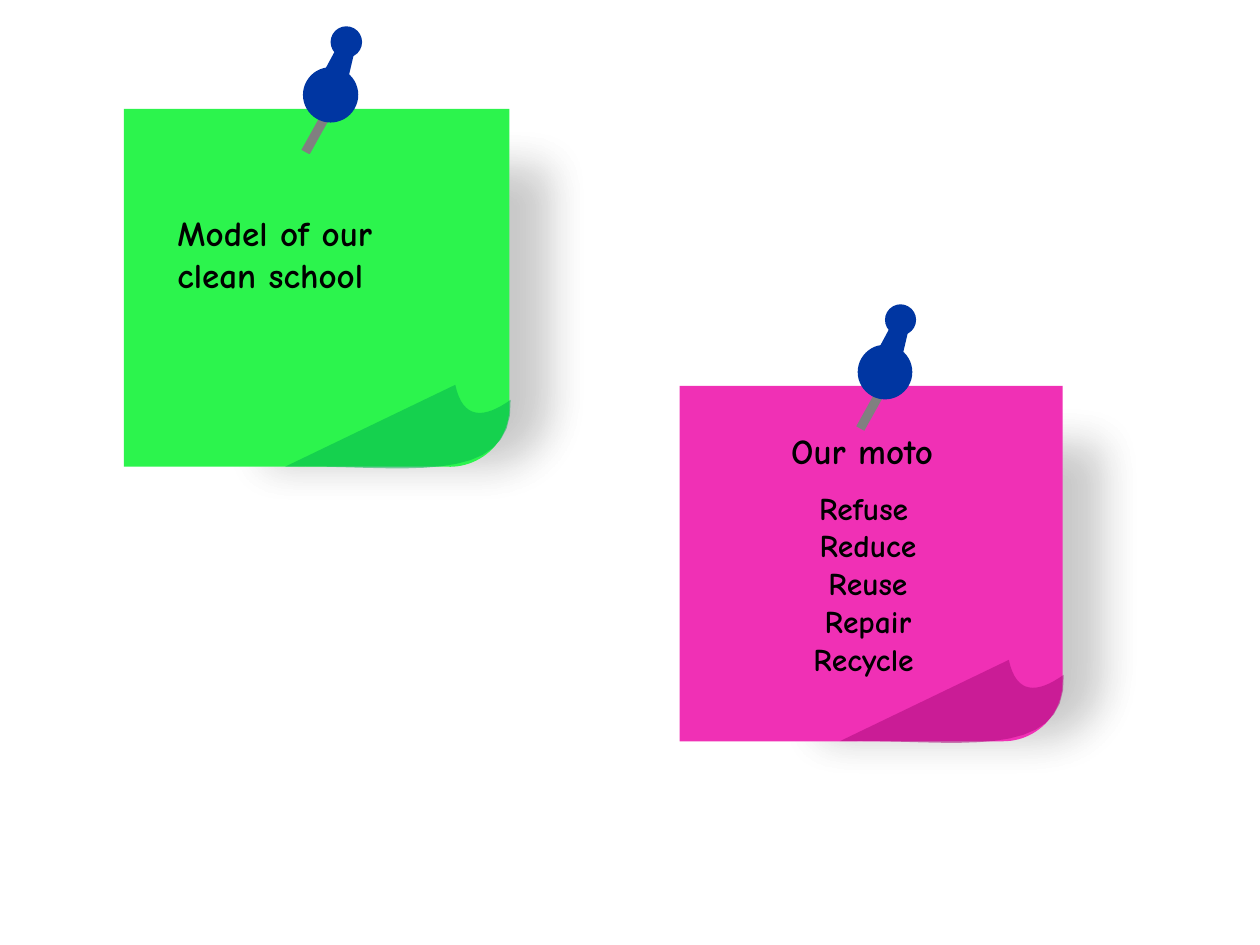
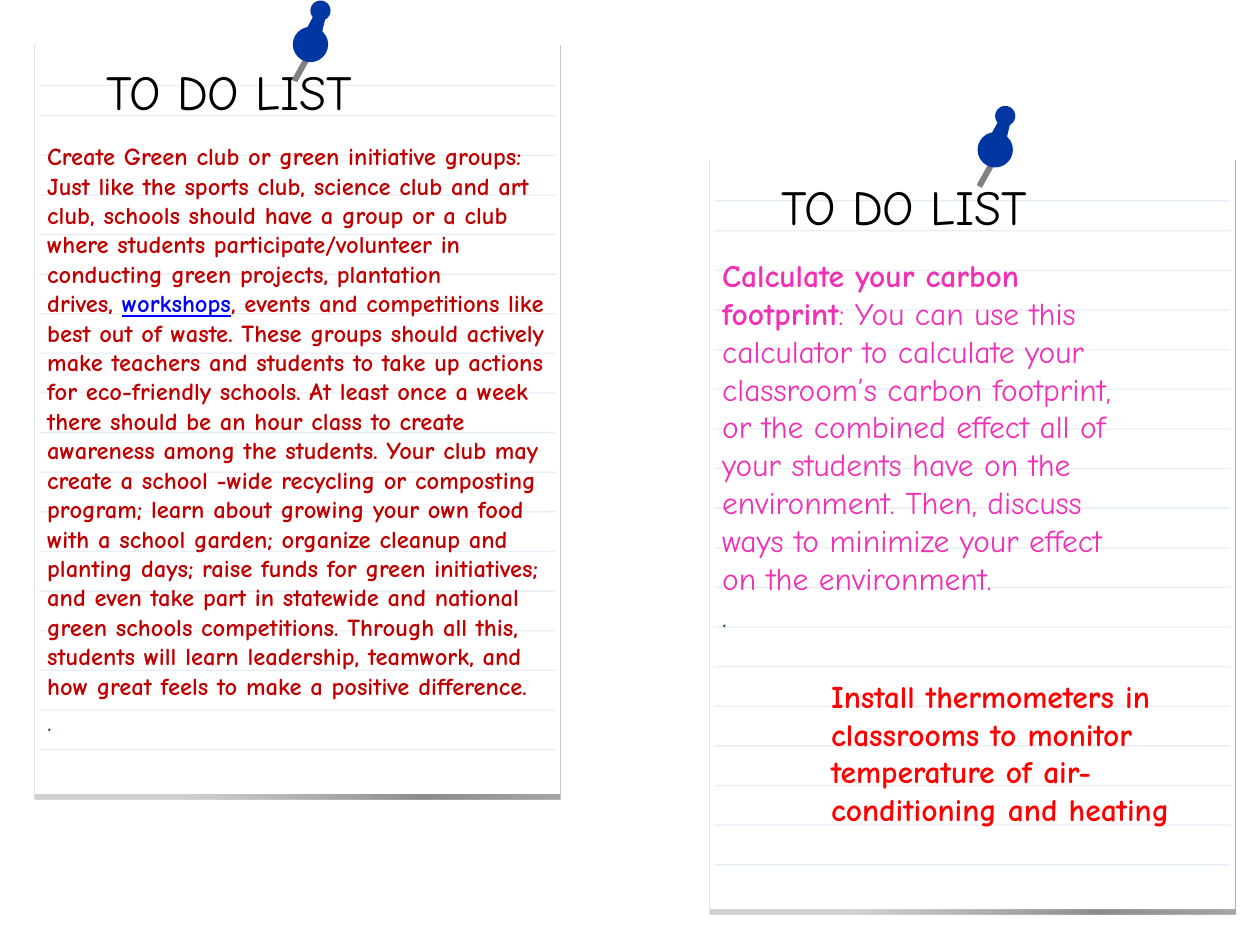
import pptx
import pptx.util
import pptx.dml.color
import pptx.enum.shapes
import pptx.enum.text
import pptx.oxml.ns
from lxml import etree

Pt = pptx.util.Pt
RGB = pptx.dml.color.RGBColor
KIND = pptx.enum.shapes.MSO_SHAPE
qn = pptx.oxml.ns.qn
HARD = chr(160)  # no-break space

# Colours
BLACK = RGB(0x00, 0x00, 0x00)
WHITE = RGB(0xFF, 0xFF, 0xFF)
GREEN = RGB(0x2C, 0xF4, 0x4D)
LEAF = RGB(0x00, 0xB0, 0x50)
PINK = RGB(0xF0, 0x30, 0xB5)
PLUM = RGB(0xA6, 0x0A, 0x79)
NAVY = RGB(0x00, 0x36, 0xA2)
STEEL = RGB(0x80, 0x80, 0x80)
SILVER = RGB(0xA6, 0xA6, 0xA6)
ASH = RGB(0x8C, 0x8C, 0x8C)
RULE = RGB(0x4B, 0x7E, 0xBC)
CRIMSON = RGB(0xC0, 0x00, 0x00)
RED = RGB(0xFF, 0x00, 0x00)
BLUE = RGB(0x00, 0x00, 0xFF)
TEAL = RGB(0x21, 0x59, 0x68)

# Text formats
NOTE = {"size": Pt(20), "bold": True, "color": BLACK}
MOTTO = {"size": Pt(18), "bold": True, "color": BLACK}
TITLE = {"size": Pt(28), "color": BLACK}
CLUB = {"size": Pt(14), "bold": True, "color": CRIMSON}
LINK = {**CLUB, "color": BLUE, "underline": True}
DOT = {"size": Pt(18), "color": TEAL}
LEAD = {"size": Pt(18), "bold": True, "color": PINK}
CALC = {"size": Pt(18), "color": PINK}
TASK = {"size": Pt(18), "bold": True, "color": RED}


def paint(fill, *stops):
    """Fill with (colour, alpha, place) stops; one stop gives a solid fill."""
    if len(stops) == 1:
        fill.solid()
        fill.fore_color.rgb = stops[0][0]
        tints = [fill._xPr.find(".//" + qn("a:srgbClr"))]
    else:
        fill.gradient()
        fill.gradient_angle = 0
        bar = fill._xPr.find(".//" + qn("a:gsLst"))
        for old in list(bar):
            bar.remove(old)
        tints = []
        for color, _, place in stops:
            stop = etree.SubElement(bar, qn("a:gs"), pos=str(place * 1000))
            tints.append(etree.SubElement(stop, qn("a:srgbClr"), val=str(color)))
    for tint, (_, alpha, _) in zip(tints, stops):
        if alpha < 100:
            etree.SubElement(tint, qn("a:alpha"), val=str(alpha * 1000))


def write(slide, box, paras, align=None, shifts=()):
    """Text box of paragraphs, each a list of (text, format) runs."""
    frame = slide.shapes.add_textbox(*map(Pt, box)).text_frame
    frame.word_wrap = True
    for i, runs in enumerate(paras):
        para = frame.paragraphs[0] if i == 0 else frame.add_paragraph()
        para.alignment = align
        if i in shifts:
            para._p.get_or_add_pPr().set("marL", str(Pt(5)))
        for text, style in runs:
            run = para.add_run()
            run.text = text
            run.font.name = "Comic Neue"
            for key, value in style.items():
                if key == "color":
                    run.font.color.rgb = value
                else:
                    setattr(run.font, key, value)


deck = pptx.Presentation()
deck.slide_width, deck.slide_height = Pt(720), Pt(540)
board, lists = [deck.slides.add_slide(deck.slide_layouts[6]) for _ in range(2)]

# Sticky notes: shade, sheet and curled corner
CURL = [
    [(221, 166.3), (205.9, 177.1), (193.7, 177.8), (189.4, 157.7)],
    [(92.2, 204.5), (155.5, 203), (223.2, 218.2), (221, 166.3)],
]
NOTES = [(70.8, 62.2, 1, GREEN, LEAF), (388.4, 220.5, 0.993, PINK, PLUM)]
for x, y, unit, color, dark in NOTES:
    for dx, dy, w, h, tone, alpha in [
        (55.4, 7.9, 212.4, 220.3, BLACK, 16),
        (0, 0, 220.3, 204.5, color, 100),
    ]:
        box = x + dx * unit, y + dy * unit, w * unit, h * unit
        sheet = board.shapes.add_shape(KIND.SNIP_ROUND_RECTANGLE, *map(Pt, box))
        sheet.rotation = 180
        sheet.adjustments[0], sheet.adjustments[1] = 0.167, 0
        sheet.shadow.inherit = False
        sheet.line.fill.background()
        paint(sheet.fill, (tone, alpha, 0))
        if tone == BLACK:
            soft = sheet._element.spPr.find(qn("a:effectLst"))
            shade = etree.SubElement(soft, qn("a:outerShdw"))
            tint = etree.SubElement(shade, qn("a:srgbClr"), val=str(BLACK))
            etree.SubElement(tint, qn("a:alpha"), val="43000")
            etree.SubElement(soft, qn("a:softEdge"), rad=str(Pt(25)))
    edge = []
    for arc in CURL:
        for step in range(17):
            t = step / 16
            parts = [(1 - t) ** 3, 3 * t * (1 - t) ** 2, 3 * t * t * (1 - t), t ** 3]
            px, py = [sum(k * p[axis] for k, p in zip(parts, arc)) for axis in (0, 1)]
            edge.append((Pt(x + px * unit), Pt(y + py * unit)))
    form = board.shapes.build_freeform(*edge[0])
    form.add_line_segments(edge[1:], close=True)
    curl = form.convert_to_shape()
    curl.shadow.inherit = False
    curl.line.fill.background()
    paint(curl.fill, (dark, 51, 0))

# Note text
write(board, (94.3, 117.4, 173.5, 77), [[("Model of our clean school", NOTE)]])
write(board, (445, 241.9, 172.1, 55.4), [[("Our moto", NOTE)]])
words = ["Refuse", "Reduce", "Reuse", "Repair", "Recycle"]
write(board, (416.8, 275.7, 153.4, 138.2), [[(word, MOTTO)] for word in words],
      pptx.enum.text.PP_ALIGN.CENTER, (1, 2, 3))

# List pages
club = [
    [("Create Green club or green initiative groups:", CLUB)],
    [("Just like the sports club, science club and art club, schools should have "
      "a group or a club where students participate/volunteer in conducting green "
      "projects, plantation drives," + HARD, CLUB),
     ("workshops", LINK),
     (", events and competitions like best out of waste. These groups should "
      "actively make teachers and students to take up actions for eco-friendly "
      "schools. At least once a week there should be an hour class to create "
      "awareness among the students. Your club may create a school -wide recycling "
      "or composting program; learn about growing your own food with a school "
      "garden; organize cleanup and planting days; raise funds for green "
      "initiatives; and even take part in statewide and national green schools "
      "competitions. Through all this, students will learn leadership, teamwork, "
      "and how great feels to make a positive difference.", CLUB)],
    [(".", DOT)],
]
calc = [
    [("Calculate your carbon footprint", LEAD),
     (": You can use this calculator to calculate your classroom’s carbon "
      "footprint, or the combined effect all of your students have on the "
      "environment. Then, discuss ways to minimize your effect on the "
      "environment.", CALC)],
    [(".", DOT)],
]
EDGE = [(SILVER, 51, 27), (ASH, 100, 74), (SILVER, 100, 100)]
LAYERS = [(-2.3, [(WHITE, 42, 0)]), (3, EDGE), (0, [(WHITE, 100, 0)])]
RULES = [25.8] + [43 + 22.64 * row for row in range(17)]
for x, y, wide, tall, paras in [
    (19.9, 23.1, 306, 416.9, club),
    (405.6, 88.9, 254.9, 290.9, calc),
]:
    for dy, stops in LAYERS:
        box = x, y + dy, 300.2, 430.6
        page = lists.shapes.add_shape(KIND.RECTANGLE, *map(Pt, box))
        page.shadow.inherit = False
        page.line.fill.background()
        paint(page.fill, *stops)
    for dy in RULES:
        ends = x + 2.6, y + dy, x + 297.5, y + dy
        rule = lists.shapes.add_connector(
            pptx.enum.shapes.MSO_CONNECTOR.STRAIGHT, *map(Pt, ends))
        rule.line.width = Pt(0.75)
        paint(rule.line.fill, (RULE, 13, 0))
        etree.SubElement(rule._element.spPr, qn("a:effectLst"))
    write(lists, (x + 33.9, y + 8.5, 232.6, 41), [[("TO DO LIST", TITLE)]])
    write(lists, (x, y + 54, wide, tall), paras)

# Push pins, measured in ball widths
NECK = [(0.25, 0.32), (0.73, -0.57), (0.98, -0.48), (0.75, 0.5)]
SHAFT = [(STEEL, 100, 58), (SILVER, 100, 100)]
PARTS = [
    (KIND.RECTANGLE, 0.32, 0.16, 0.17, 1.47, 29.1, SHAFT),
    (KIND.OVAL, 0, 0, 1, 1, 0, [(NAVY, 100, 0)]),
    (KIND.OVAL, 0.5, -0.74, 0.57, 0.57, 0, [(NAVY, 100, 0)]),
]
for slide, x, y, ball in [
    (board, 173.1, 38.4, 31.6),
    (board, 490.1, 197, 31.2),
    (lists, 167.3, 15.3, 20.2),
    (lists, 558.6, 75.5, 20.2),
]:
    for kind, dx, dy, w, h, turn, stops in PARTS:
        box = x + dx * ball, y + dy * ball, w * ball, h * ball
        part = slide.shapes.add_shape(kind, *map(Pt, box))
        part.rotation = turn
        part.shadow.inherit = False
        part.line.fill.background()
        paint(part.fill, *stops)
    edge = [(Pt(x + dx * ball), Pt(y + dy * ball)) for dx, dy in NECK]
    form = slide.shapes.build_freeform(*edge[0])
    form.add_line_segments(edge[1:], close=True)
    neck = form.convert_to_shape()
    neck.shadow.inherit = False
    neck.line.fill.background()
    paint(neck.fill, (NAVY, 100, 0))

# Last task
write(lists, (467.8, 383.2, 226.8, 116.6),
      [[("Install thermometers in classrooms to monitor temperature of "
         "air-conditioning and heating", TASK)]])

deck.save("out.pptx")
